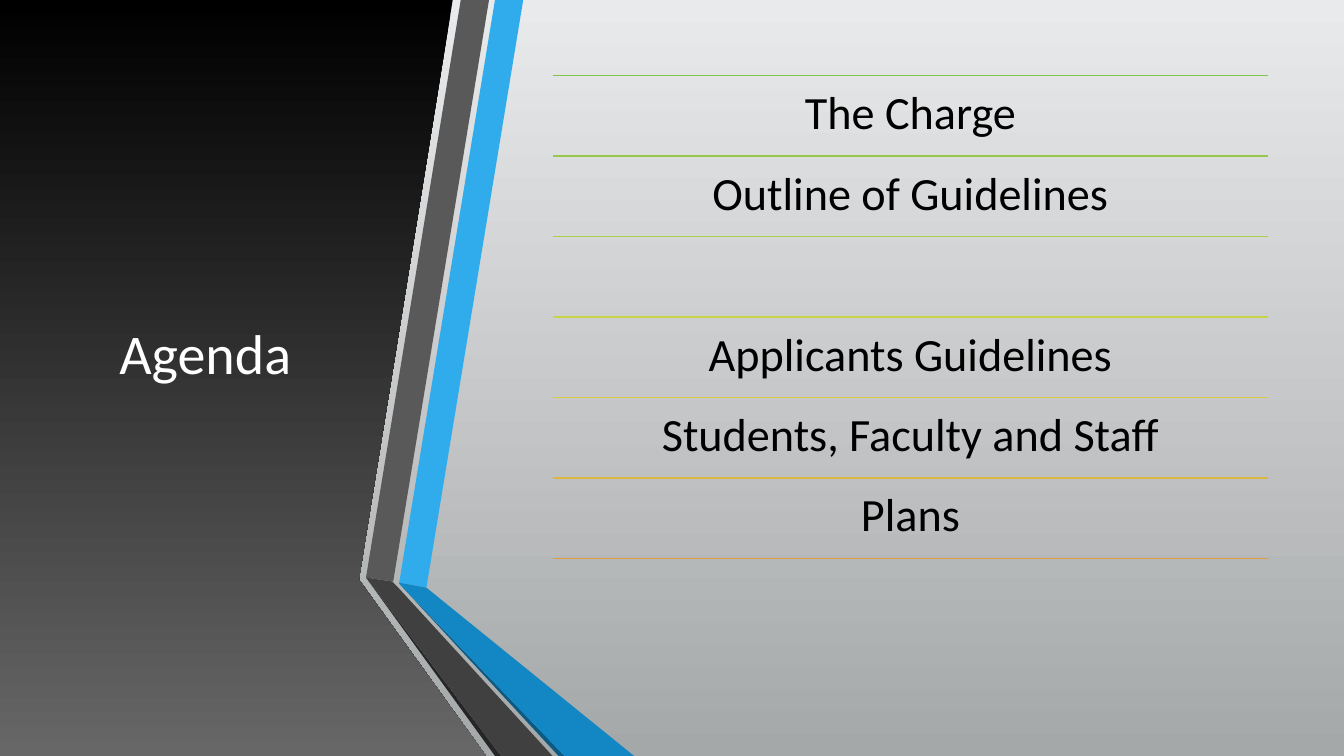
from lxml import etree
from pptx import Presentation
from pptx.dml.color import RGBColor
from pptx.enum import shapes, text
from pptx.oxml.ns import qn
from pptx.util import Inches, Pt

FONT = "Calibri"
COLORS = {
    "light": "E9EAEB", "silver": "A5A8A9",
    "black": "000000", "grey": "676767", "white": "FFFFFF",
    "blue": "30ACEC", "blue_fold": "1287C3", "blue_edge": "0C5A82",
    "dark": "595959", "dark_fold": "404040", "dark_edge": "262626",
}
TITLE = "Agenda"
# Each row: text (None leaves the row blank) and colour of the rule above it
ROWS = [
    ("The Charge", "80C34F"),
    ("Outline of Guidelines", "95C84C"),
    (None, "ADCE49"),
    ("Applicants Guidelines", "C8D346"),
    ("Students, Faculty and Staff", "D8CB43"),
    ("Plans", "DDB541"),
]
LAST_RULE = "E29D3E"
LIST_LEFT, LIST_RIGHT, LIST_TOP, LIST_BOTTOM = 5.48, 12.58, 0.75, 5.54
INSET = 0.14

PANEL = [(3.53, 0), (4.49, 0), (3.56, 5.75), (4.82, 7.5), (0, 7.5), (0, 0)]
RIBBONS = [
    ("blue", [(3.96, 5.78), (4.23, 5.83), (5.19, 0), (4.91, 0)]),
    ("dark", [(4.85, 0), (4.57, 0), (3.63, 5.73), (3.9, 5.77)]),
    ("dark_edge", [(3.63, 5.73), (4.91, 7.5), (4.97, 7.5)]),
    ("blue_edge", [(3.96, 5.79), (5.54, 7.5), (5.6, 7.5)]),
    ("blue_fold", [(3.96, 5.79), (5.6, 7.5), (6.29, 7.5), (4.23, 5.83), (3.96, 5.78)]),
    ("dark_fold", [(5.48, 7.5), (3.95, 5.83), (3.89, 5.77), (3.63, 5.73), (4.97, 7.5)]),
]


def rgb(name):
    return RGBColor.from_string(COLORS.get(name, name))


def shade_down(fill, top, bottom):
    """Fill with a vertical gradient from top colour to bottom colour."""
    fill.gradient()
    fill.gradient_angle = 270
    for stop, name in zip(fill.gradient_stops, (top, bottom)):
        stop.color.rgb = rgb(name)


def add_outline(slide, points):
    corners = [(Inches(x), Inches(y)) for x, y in points]
    builder = slide.shapes.build_freeform(*corners[0])
    builder.add_line_segments(corners[1:], close=True)
    shape = builder.convert_to_shape()
    shape.shadow.inherit = False
    shape.line.fill.background()
    return shape


def write_centred(shape, words, size, color, frame_format):
    frame = shape.text_frame
    for name, value in frame_format.items():
        setattr(frame, name, value)
    paragraph = frame.paragraphs[0]
    paragraph.alignment = text.PP_ALIGN.CENTER
    paragraph.line_spacing = 0.9
    run = paragraph.add_run()
    run.text = words
    run.font.name = FONT
    run.font.size = Pt(size)
    run.font.color.rgb = rgb(color)


def add_rule(slide, y, color):
    rule = slide.shapes.add_connector(
        shapes.MSO_CONNECTOR.STRAIGHT,
        Inches(LIST_LEFT), Inches(y), Inches(LIST_RIGHT), Inches(y))
    rule.line.color.rgb = rgb(color)
    rule.line.width = Pt(1.25)
    etree.SubElement(rule.element.spPr, qn("a:effectLst"))


def add_agenda(slide):
    pitch = (LIST_BOTTOM - LIST_TOP) / len(ROWS)
    margins = {f"margin_{side}": Inches(INSET) for side in ("left", "top", "right", "bottom")}
    row_format = {"word_wrap": True, "vertical_anchor": text.MSO_ANCHOR.TOP, **margins}
    for index, (words, color) in enumerate(ROWS):
        y = LIST_TOP + index * pitch
        add_rule(slide, y, color)
        if words:
            box = slide.shapes.add_textbox(
                Inches(LIST_LEFT), Inches(y), Inches(LIST_RIGHT - LIST_LEFT), Inches(pitch))
            write_centred(box, words, 33, "black", row_format)
    add_rule(slide, LIST_BOTTOM, LAST_RULE)


def main():
    presentation = Presentation()
    presentation.slide_width, presentation.slide_height = Inches(13.33), Inches(7.5)
    slide = presentation.slides.add_slide(presentation.slide_layouts[5])
    shade_down(slide.background.fill, "light", "silver")

    backdrop = slide.shapes.add_shape(
        shapes.MSO_SHAPE.RECTANGLE, 0, 0, presentation.slide_width, presentation.slide_height)
    backdrop.shadow.inherit = False
    backdrop.line.fill.background()
    shade_down(backdrop.fill, "light", "silver")

    panel = add_outline(slide, PANEL)
    shade_down(panel.fill, "black", "grey")

    title = slide.shapes.title
    title.left, title.top, title.width, title.height = map(Inches, (0.59, 0.75, 2.89, 5.58))
    write_centred(title, TITLE, 40, "white",
                  {"word_wrap": True, "vertical_anchor": text.MSO_ANCHOR.MIDDLE})
    panel.element.addnext(title.element)

    for color, points in RIBBONS:
        ribbon = add_outline(slide, points)
        ribbon.fill.solid()
        ribbon.fill.fore_color.rgb = rgb(color)

    add_agenda(slide)
    presentation.save("out.pptx")


if __name__ == "__main__":
    main()
